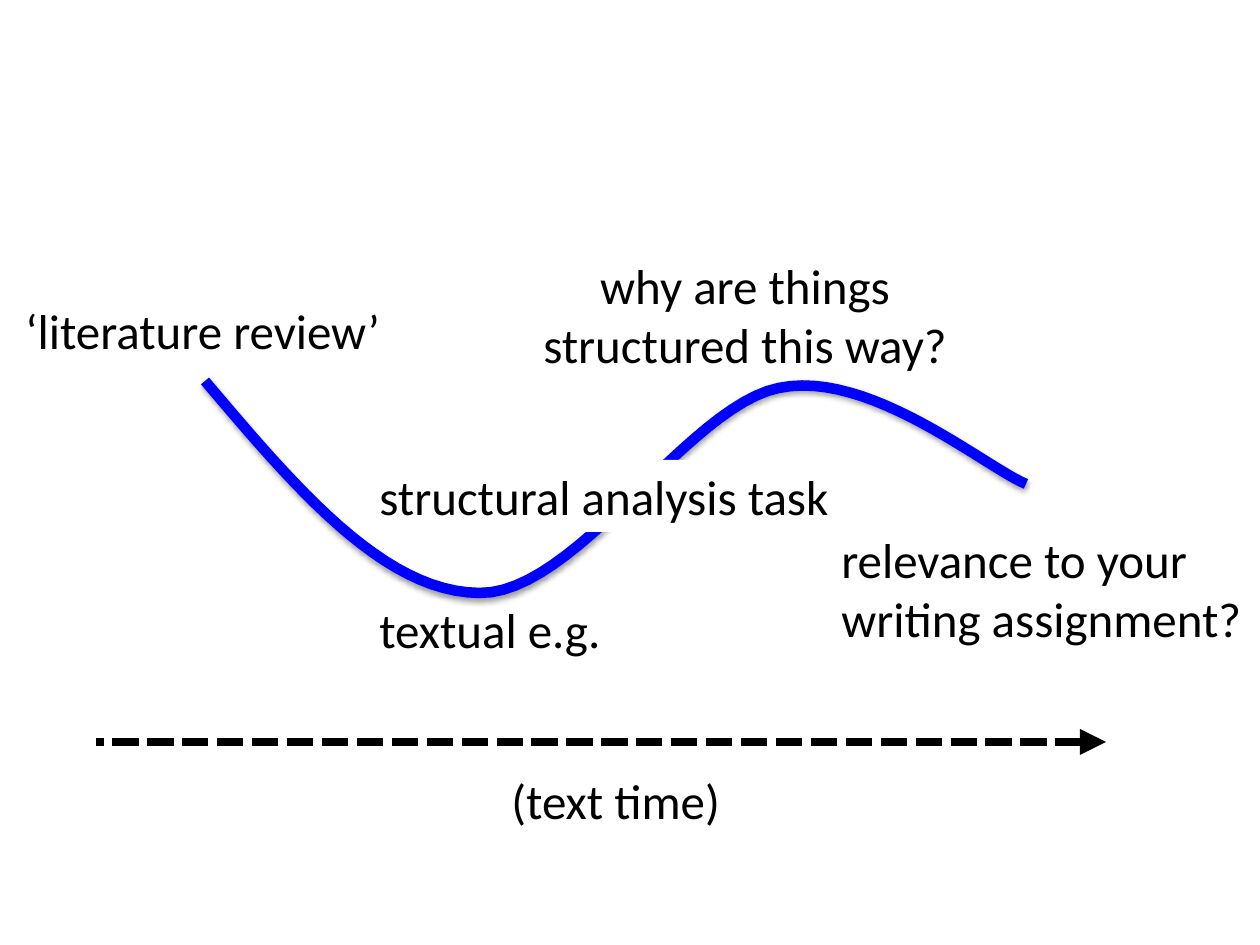
from lxml import etree
from pptx import Presentation
from pptx import util as u
from pptx.dml.color import RGBColor
from pptx.enum import dml, shapes, text
from pptx.oxml.ns import qn

EMU_PER_PX = 914400 / 126


def px(value):
    return u.Emu(round(value * EMU_PER_PX))


def color(value):
    return RGBColor.from_string(value)


presentation = Presentation()
presentation.slide_width = px(1260)
presentation.slide_height = px(945)
slide = presentation.slides.add_slide(presentation.slide_layouts[6])

curve_start = (205, 381)
curve_segments = [
    [(294, 486), (383, 592), (479, 593)],
    [(575, 595), (688, 406), (779, 388)],
    [(869, 369), (985, 467), (1026, 484)],
]
STEPS = 24
curve_points = []
anchor = curve_start
for segment in curve_segments:
    for step in range(1, STEPS + 1):
        t = step / STEPS
        weights = [(1 - t) ** 3, 3 * t * (1 - t) ** 2, 3 * t ** 2 * (1 - t), t ** 3]
        controls = [anchor, *segment]
        curve_points.append(tuple(
            px(sum(weight * point[axis] for weight, point in zip(weights, controls)))
            for axis in (0, 1)
        ))
    anchor = segment[-1]

builder = slide.shapes.build_freeform(px(curve_start[0]), px(curve_start[1]))
builder.add_line_segments(curve_points, close=False)
curve = builder.convert_to_shape()
curve.fill.background()
curve.line.color.rgb = color("0000FF")
curve.line.width = u.Pt(6)
curve.shadow.inherit = False
effects = curve._element.spPr.find(qn("a:effectLst"))
shadow = etree.SubElement(
    effects, qn("a:outerShdw"), blurRad=str(u.Pt(3.1)), dist=str(u.Pt(1.6)),
    dir="5400000", rotWithShape="0",
)
shadow_color = etree.SubElement(shadow, qn("a:srgbClr"), val="000000")
etree.SubElement(shadow_color, qn("a:alpha"), val="38000")

LEFT, CENTER = text.PP_ALIGN.LEFT, text.PP_ALIGN.CENTER
labels = [
    ("‘literature review’", 13, 294, 384, 72, LEFT, False, None),
    ("textual e.g.", 367, 593, 289, 72, LEFT, True, None),
    ("structural analysis task", 367, 460, 494, 72, LEFT, True, "FFFFFF"),
    ("(text time)", 499, 764, 238, 72, LEFT, False, None),
    ("why are things structured this way?", 525, 249, 440, 131, CENTER, True, None),
    ("relevance to your writing assignment?", 829, 523, 431, 131, LEFT, True, None),
]
for wording, left, top, width, height, alignment, wrap, fill in labels:
    box = (px(left), px(top), px(width), px(height))
    if fill:
        label = slide.shapes.add_shape(shapes.MSO_SHAPE.RECTANGLE, *box)
        label.shadow.inherit = False
        label.fill.solid()
        label.fill.fore_color.rgb = color(fill)
        label.line.fill.background()
    else:
        label = slide.shapes.add_textbox(*box)
    frame = label.text_frame
    frame.word_wrap = wrap
    frame.auto_size = text.MSO_AUTO_SIZE.SHAPE_TO_FIT_TEXT
    frame.vertical_anchor = text.MSO_ANCHOR.TOP
    paragraph = frame.paragraphs[0]
    paragraph.text = wording
    paragraph.alignment = alignment
    paragraph.font.name = "Calibri"
    paragraph.font.size = u.Pt(28)
    paragraph.font.color.rgb = color("000000")

time_arrow = slide.shapes.add_connector(
    shapes.MSO_CONNECTOR.STRAIGHT, px(1106), px(742), px(96), px(742)
)
time_arrow.line.color.rgb = color("000000")
time_arrow.line.width = u.Pt(5)
time_arrow.line.dash_style = dml.MSO_LINE.SQUARE_DOT
arrow_properties = time_arrow._element.spPr
etree.SubElement(arrow_properties.find(qn("a:ln")), qn("a:headEnd"), type="triangle")
etree.SubElement(arrow_properties, qn("a:effectLst"))

presentation.save("out.pptx")
